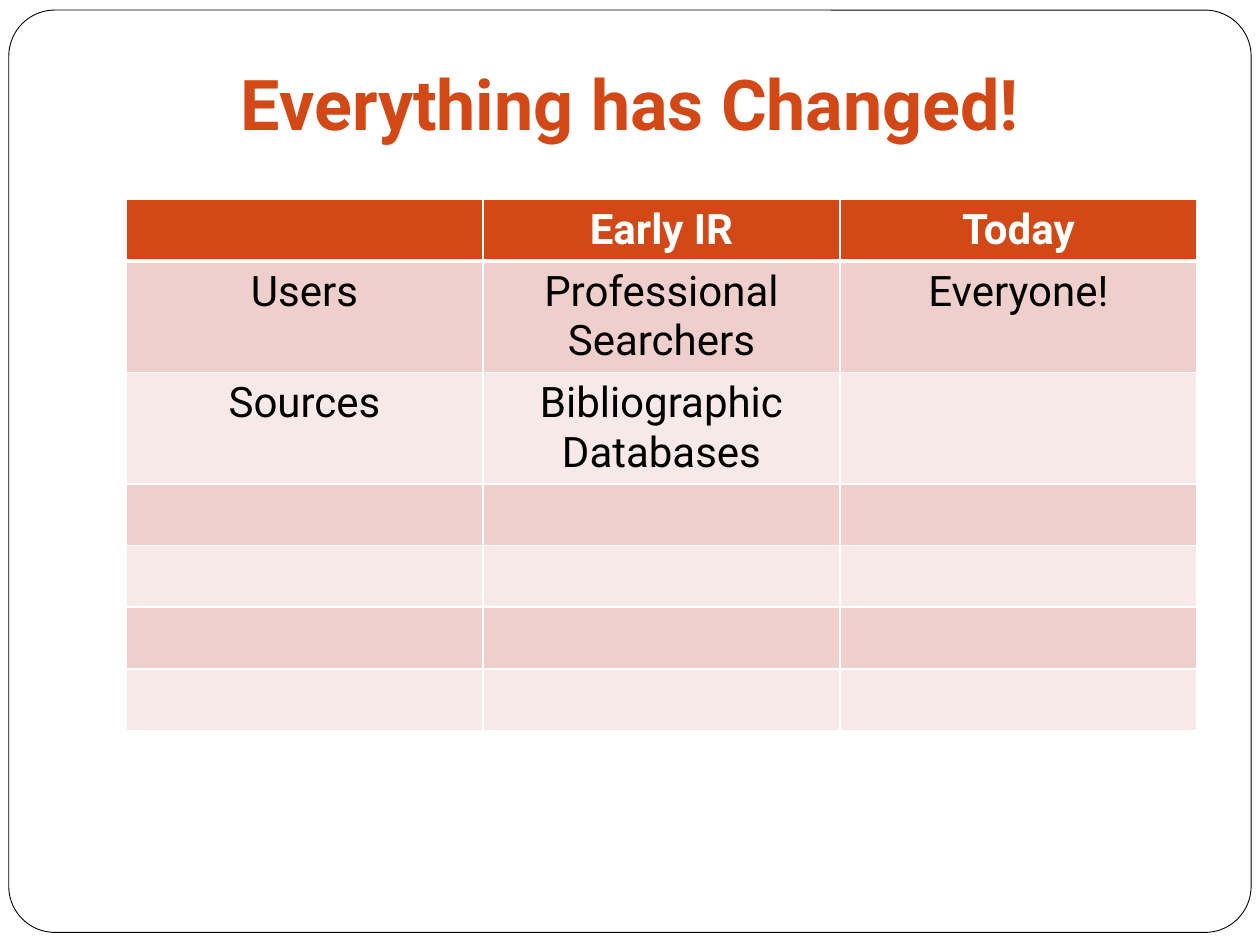
"""Build the slide that contrasts early information retrieval with today."""
from dataclasses import dataclass

from lxml.etree import SubElement
from pptx import Presentation
from pptx.dml.color import RGBColor as Rgb
from pptx.enum.shapes import MSO_SHAPE as Kind
from pptx.enum.text import MSO_ANCHOR as Anchor, PP_ALIGN as Align
from pptx.oxml.ns import qn
from pptx.slide import Slide
from pptx.table import _Cell as Cell
from pptx.text.text import _Paragraph as Para
from pptx.util import Inches, Pt


@dataclass(frozen=True)
class Theme:
    font: str = "Roboto"
    accent: str = "D34817"
    dark: str = "EFCFCC"
    pale: str = "F7E9E8"
    white: str = "FFFFFF"
    black: str = "000000"
    title: int = 40
    body: int = 24
    thin: int = 1
    thick: int = 3


@dataclass(frozen=True)
class Row:
    height: float
    cells: tuple[str, str, str] = ("", "", "")


THEME = Theme()
ROWS = (
    Row(0.49, ("", "Early IR", "Today")),
    Row(0.88, ("Users", "Professional Searchers", "Everyone!")),
    Row(0.88, ("Sources", "Bibliographic\nDatabases", "")),
    *[Row(0.49)] * 4,
)


def write(para: Para, text: str, size: int, color: str, bold: bool) -> None:
    """Add one centred run to a paragraph."""
    para.alignment = Align.CENTER
    run = para.add_run()
    run.text = text
    font = run.font
    font.name, font.size, font.bold = THEME.font, Pt(size), bold
    font.color.rgb = Rgb.from_string(color)


def edge(cell: Cell, top: int, bottom: int) -> None:
    """Draw white borders on all four sides of a cell."""
    props = cell._tc.get_or_add_tcPr()
    sides = {"L": THEME.thin, "R": THEME.thin, "T": top, "B": bottom}
    for spot, (side, width) in enumerate(sides.items()):
        line = SubElement(props, qn(f"a:ln{side}"), w=str(Pt(width)))
        fill = SubElement(line, qn("a:solidFill"))
        SubElement(fill, qn("a:srgbClr"), val=THEME.white)
        props.insert(spot, line)


def add_frame(slide: Slide) -> None:
    """Place the rounded frame behind everything else."""
    frame = slide.shapes.add_shape(
        Kind.ROUNDED_RECTANGLE, Inches(0.07), Inches(0.08), Inches(9.86), Inches(7.32))
    frame.adjustments[0] = 0.05
    frame.shadow.inherit = False
    frame.fill.solid()
    frame.fill.fore_color.rgb = Rgb.from_string(THEME.white)
    frame.line.color.rgb = Rgb.from_string(THEME.black)
    frame.line.width = Pt(0.5)
    slide.shapes._spTree.insert(2, frame._element)


def add_title(slide: Slide, text: str) -> None:
    """Move the title placeholder and fill it."""
    title = slide.shapes.title
    title.left, title.top = Inches(0.75), Inches(0)
    title.width, title.height = Inches(8.5), Inches(1.25)
    frame = title.text_frame
    frame.vertical_anchor = Anchor.BOTTOM
    frame.margin_bottom = Inches(0.1)
    write(frame.paragraphs[0], text, THEME.title, THEME.accent, True)


def add_grid(slide: Slide, rows: tuple[Row, ...]) -> None:
    """Draw the comparison table with a header and banded rows."""
    total = sum(row.height for row in rows)
    grid = slide.shapes.add_table(
        len(rows), 3, Inches(1), Inches(1.58), Inches(8.5), Inches(total)).table
    for i, row in enumerate(rows):
        grid.rows[i].height = Inches(row.height)
        head = i == 0
        shade = THEME.accent if head else THEME.dark if i % 2 else THEME.pale
        ink = THEME.white if head else THEME.black
        top = THEME.thick if i == 1 else THEME.thin
        bottom = THEME.thick if head else THEME.thin
        for cell, text in zip(grid.rows[i].cells, row.cells):
            cell.fill.solid()
            cell.fill.fore_color.rgb = Rgb.from_string(shade)
            edge(cell, top, bottom)
            frame = cell.text_frame
            for n, part in enumerate(text.split("\n") if text else ()):
                para = frame.add_paragraph() if n else frame.paragraphs[0]
                write(para, part, THEME.body, ink, head)


def main() -> None:
    """Create and save the deck."""
    deck = Presentation()
    deck.slide_width, deck.slide_height = Inches(10), Inches(7.5)
    slide = deck.slides.add_slide(deck.slide_layouts[5])
    add_frame(slide)
    add_title(slide, "Everything has Changed!")
    add_grid(slide, ROWS)
    deck.save("out.pptx")


if __name__ == "__main__":
    main()
